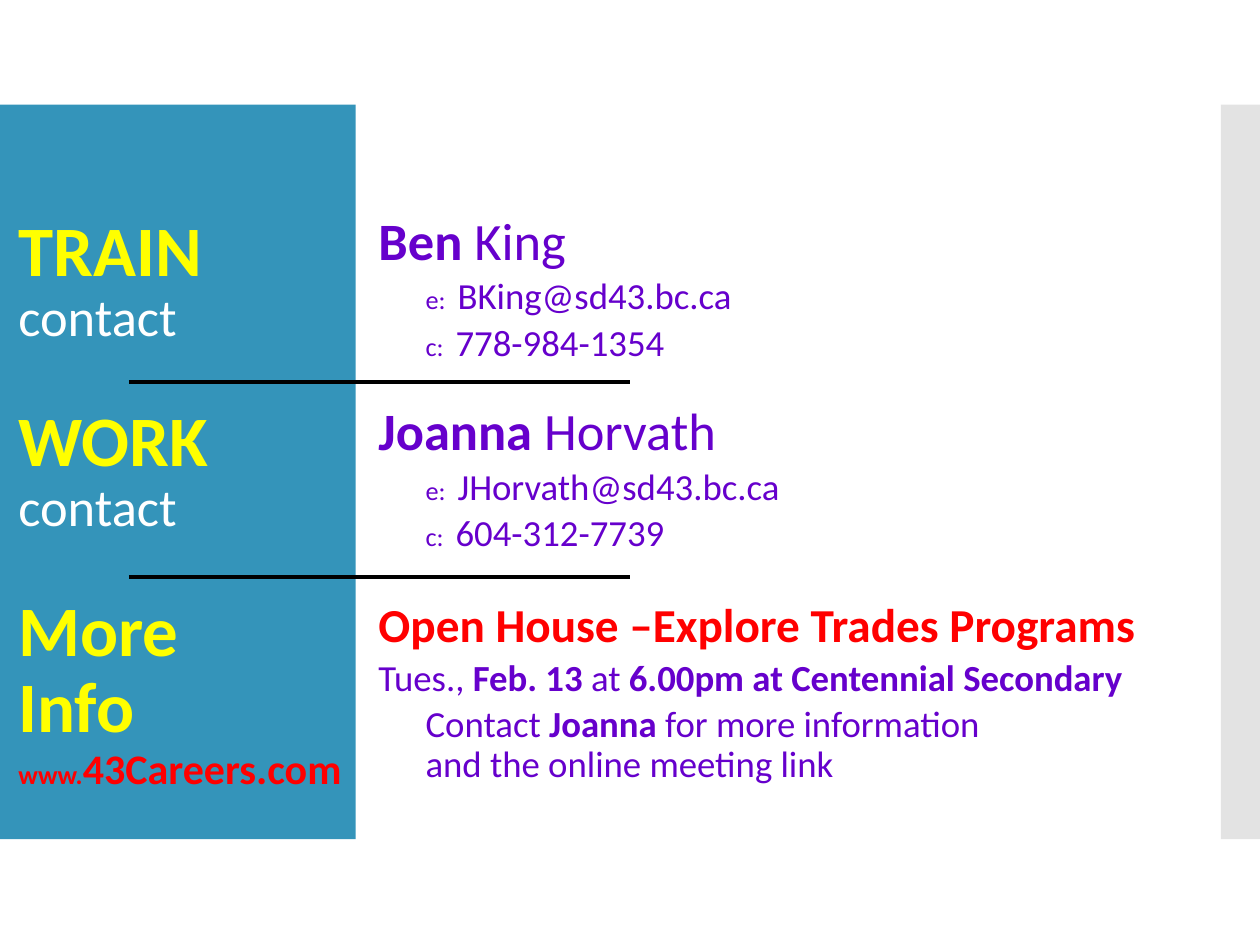
"""Build the contacts slide for the train and work programs."""
import copy

import pptx
import pptx.dml.color
import pptx.enum.shapes
import pptx.enum.text
import pptx.oxml.ns
import pptx.util

Cm = pptx.util.Cm
Pt = pptx.util.Pt
ANCHOR = pptx.enum.text.MSO_ANCHOR
PURPLE, YELLOW, RED, WHITE = "6600CC", "FFFF00", "FF0000", "FFFFFF"


def color(hex_value):
    return pptx.dml.color.RGBColor.from_string(hex_value)


class ContactSlide:
    font = "Calibri"
    line_spacing = 0.9
    indent = Cm(0.95)

    def __init__(self, deck, layout_index):
        self.slide = deck.slides.add_slide(deck.slide_layouts[layout_index])
        self.panel_count = 0

    def panel(self, left, top, width, height, fill, opacity=None):
        band = self.slide.shapes.add_shape(
            pptx.enum.shapes.MSO_SHAPE.RECTANGLE,
            Cm(left), Cm(top), Cm(width), Cm(height))
        band.shadow.inherit = False
        band.fill.solid()
        band.fill.fore_color.rgb = color(fill)
        band.line.fill.background()
        if opacity is not None:
            tint = band.element.spPr.find(".//" + pptx.oxml.ns.qn("a:srgbClr"))
            alpha = tint.makeelement(pptx.oxml.ns.qn("a:alpha"),
                                     {"val": str(int(opacity * 100000))})
            tint.append(alpha)
        self.slide.shapes.element.insert(2 + self.panel_count, band.element)
        self.panel_count += 1

    def rule(self, left, right, y):
        divider = self.slide.shapes.add_connector(
            pptx.enum.shapes.MSO_CONNECTOR.STRAIGHT,
            Cm(left), Cm(y), Cm(right), Cm(y))
        divider.line.color.rgb = color("000000")
        divider.line.width = Pt(2.25)
        properties = divider.element.spPr
        properties.append(
            properties.makeelement(pptx.oxml.ns.qn("a:effectLst"), {}))

    def text(self, index, box, paragraphs, anchor=ANCHOR.TOP):
        holder = self.slide.placeholders[index]
        holder.left, holder.top, holder.width, holder.height = map(Cm, box)
        frame = holder.text_frame
        frame.word_wrap = True
        frame.auto_size = pptx.enum.text.MSO_AUTO_SIZE.NONE
        frame.vertical_anchor = anchor
        frame.margin_left = frame.margin_right = Cm(0.2)
        frame.margin_top = frame.margin_bottom = Cm(0.1)
        for number, (indented, before, after, runs) in enumerate(paragraphs):
            paragraph = frame.add_paragraph() if number else frame.paragraphs[0]
            paragraph.alignment = pptx.enum.text.PP_ALIGN.LEFT
            paragraph.line_spacing = self.line_spacing
            paragraph.space_before = Pt(before)
            paragraph.space_after = Pt(after)
            layout = paragraph._p.get_or_add_pPr()
            layout.set("marL", str(self.indent if indented else 0))
            layout.set("indent", "0")
            layout.append(layout.makeelement(pptx.oxml.ns.qn("a:buNone"), {}))
            for run in runs:
                self.run(paragraph, *run)

    def run(self, paragraph, words, size, tone, bold=False):
        for number, line in enumerate(words.split("\n")):
            if number:
                paragraph.add_line_break()
                line_break = paragraph._p[-1]
                line_break.append(copy.deepcopy(piece.font._element))
            if line:
                piece = paragraph.add_run()
                piece.text = line
                piece.font.name = self.font
                piece.font.size = Pt(size)
                piece.font.bold = bold
                piece.font.color.rgb = color(tone)

    def remove(self, index):
        unused = self.slide.placeholders[index].element
        unused.getparent().remove(unused)


def contact(first, last, email, phone):
    return [
        (False, 0, 3.8, [(first, 30, PURPLE, True), (last, 30, PURPLE)]),
        (True, 0, 3.8, [("e:  ", 15, PURPLE), (email, 21, PURPLE)]),
        (True, 0, 6, [("c:  ", 15, PURPLE), (phone, 21, PURPLE)]),
    ]


def main():
    deck = pptx.Presentation()
    deck.slide_width, deck.slide_height = Cm(25.4), Cm(19.05)
    page = ContactSlide(deck, 4)

    page.panel(0, 2.11, 7.17, 14.81, "3494BA")
    page.panel(24.61, 2.11, 0.79, 14.81, "C8C8C8", 0.5)

    sections = [
        (False, before, 0, [(name + "\n", 40.5, YELLOW, True),
                            ("contact", 30, WHITE)])
        for name, before in (("TRAIN", 0), ("WORK", 32.5))
    ]
    sections += [
        (False, 32.5, 0, [("More\nInfo", 40.5, YELLOW, True)]),
        (False, 0, 0, [("www.", 15, RED, True),
                       ("43Careers.com", 24, RED, True)]),
    ]
    page.text(0, (0.17, 3.73, 7.44, 12.37), sections, ANCHOR.BOTTOM)

    page.text(1, (7.43, 4.23, 12.22, 3.96),
              contact("Ben ", "King", "BKing@sd43.bc.ca", "778-984-1354"))
    page.text(2, (7.43, 8.07, 12.22, 3.96),
              contact("Joanna", " Horvath", "JHorvath@sd43.bc.ca",
                      "604-312-7739"))
    page.text(3, (7.43, 12.03, 16.51, 3.84), [
        (False, 0, 3.8,
         [("Open House –Explore Trades Programs", 27, RED, True)]),
        (False, 0, 3.8,
         [("Tues., ", 21, PURPLE), ("Feb. 13 ", 21, PURPLE, True),
          ("at", 21, PURPLE),
          (" 6.00pm at Centennial Secondary", 21, PURPLE, True)]),
        (True, 0, 3.8,
         [("Contact ", 21, PURPLE), ("Joanna", 21, PURPLE, True),
          (" for more information\nand the online meeting link", 21, PURPLE)]),
    ])
    page.remove(4)

    for y in (7.7, 11.63):
        page.rule(2.6, 12.7, y)

    deck.save("out.pptx")


if __name__ == "__main__":
    main()
